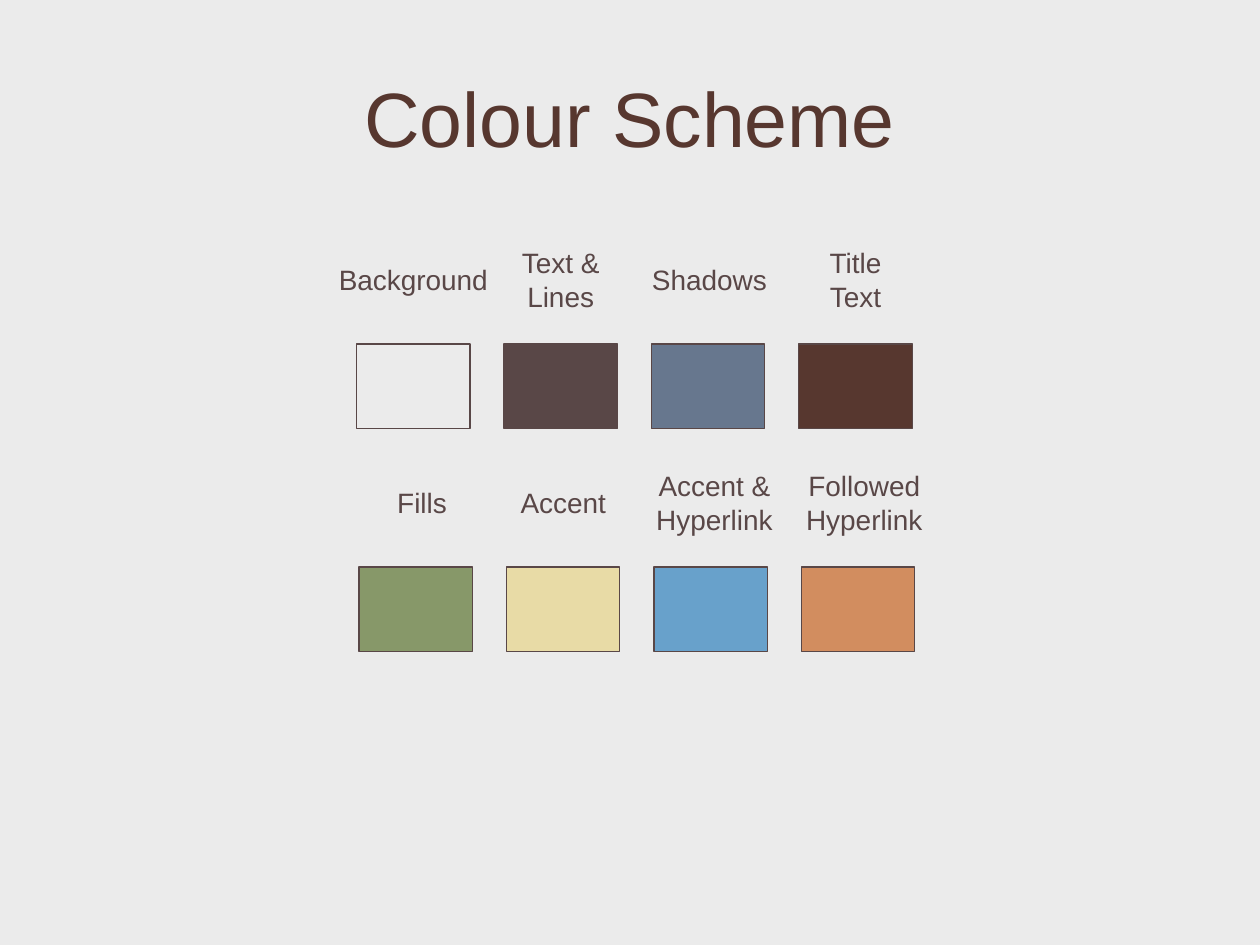
from dataclasses import dataclass

from pptx import Presentation
from pptx.dml.color import RGBColor
from pptx.enum.shapes import MSO_SHAPE
from pptx.enum.text import MSO_ANCHOR, MSO_AUTO_SIZE, PP_ALIGN
from pptx.util import Inches, Pt

FONT = "Arial"
COLORS = {
    "background": "EBEBEB",
    "text": "594747",
    "shadows": "67778E",
    "title": "57372F",
    "fills": "879869",
    "accent": "E8DBA6",
    "hyperlink": "68A1CB",
    "followed": "D28D5F",
}

# Grid of swatches, in inches
LEFT, TOP = 2.83, 2.73
COL_STEP, ROW_STEP = 1.17, 1.77
ROW_SHIFT = 0.02
SWATCH_W, SWATCH_H = 0.9, 0.67
LABEL_RISE = 0.51  # from the swatch top up to the label's middle
LABEL_HEIGHTS = {1: 0.37, 2: 0.64}


@dataclass(frozen=True)
class Swatch:
    color: str
    label: str
    label_w: float
    nudge: float = 0.0  # label's offset from the swatch's centre


ROWS = [
    [
        Swatch("background", "Background", 1.39),
        Swatch("text", "Text &\nLines", 0.84),
        Swatch("shadows", "Shadows", 1.12, 0.01),
        Swatch("title", "Title\vText", 0.63),
    ],
    [
        Swatch("fills", "Fills", 0.6, 0.05),
        Swatch("accent", "Accent", 0.88),
        Swatch("hyperlink", "Accent &\nHyperlink", 1.13, 0.03),
        Swatch("followed", "Followed\nHyperlink", 1.13, 0.05),
    ],
]


def rgb(name: str) -> RGBColor:
    return RGBColor.from_string(COLORS[name])


def add_text(slide, text: str, box: tuple, size: int, color: str):
    """Add centred text and return its frame."""
    tf = slide.shapes.add_textbox(*map(Inches, box)).text_frame
    tf.text = text
    for p in tf.paragraphs:
        p.alignment = PP_ALIGN.CENTER
        for r in p.runs:
            r.font.name = FONT
            r.font.size = Pt(size)
            r.font.color.rgb = rgb(color)
    return tf


def add_swatch(slide, swatch: Swatch, row: int, col: int) -> None:
    x = LEFT + col * COL_STEP + row * ROW_SHIFT
    y = TOP + row * ROW_STEP
    sp = slide.shapes.add_shape(
        MSO_SHAPE.RECTANGLE, *map(Inches, (x, y, SWATCH_W, SWATCH_H))
    )
    sp.shadow.inherit = False
    sp.fill.solid()
    sp.fill.fore_color.rgb = rgb(swatch.color)
    sp.line.color.rgb = rgb("text")
    sp.line.width = Pt(0.75)

    height = LABEL_HEIGHTS[len(swatch.label.splitlines())]
    center = x + SWATCH_W / 2 + swatch.nudge
    box = (center - swatch.label_w / 2, y - LABEL_RISE - height / 2,
           swatch.label_w, height)
    tf = add_text(slide, swatch.label, box, 16, "text")
    tf.word_wrap = False
    tf.auto_size = MSO_AUTO_SIZE.SHAPE_TO_FIT_TEXT


def main() -> None:
    prs = Presentation()
    prs.slide_width, prs.slide_height = Inches(10), Inches(7.5)
    slide = prs.slides.add_slide(prs.slide_layouts[6])
    slide.background.fill.solid()
    slide.background.fill.fore_color.rgb = rgb("background")

    title = add_text(slide, "Colour Scheme", (0.53, 0.3, 8.94, 1.25), 44, "title")
    title.word_wrap = True
    title.vertical_anchor = MSO_ANCHOR.MIDDLE

    for row, swatches in enumerate(ROWS):
        for col, swatch in enumerate(swatches):
            add_swatch(slide, swatch, row, col)
    prs.save("out.pptx")


if __name__ == "__main__":
    main()
